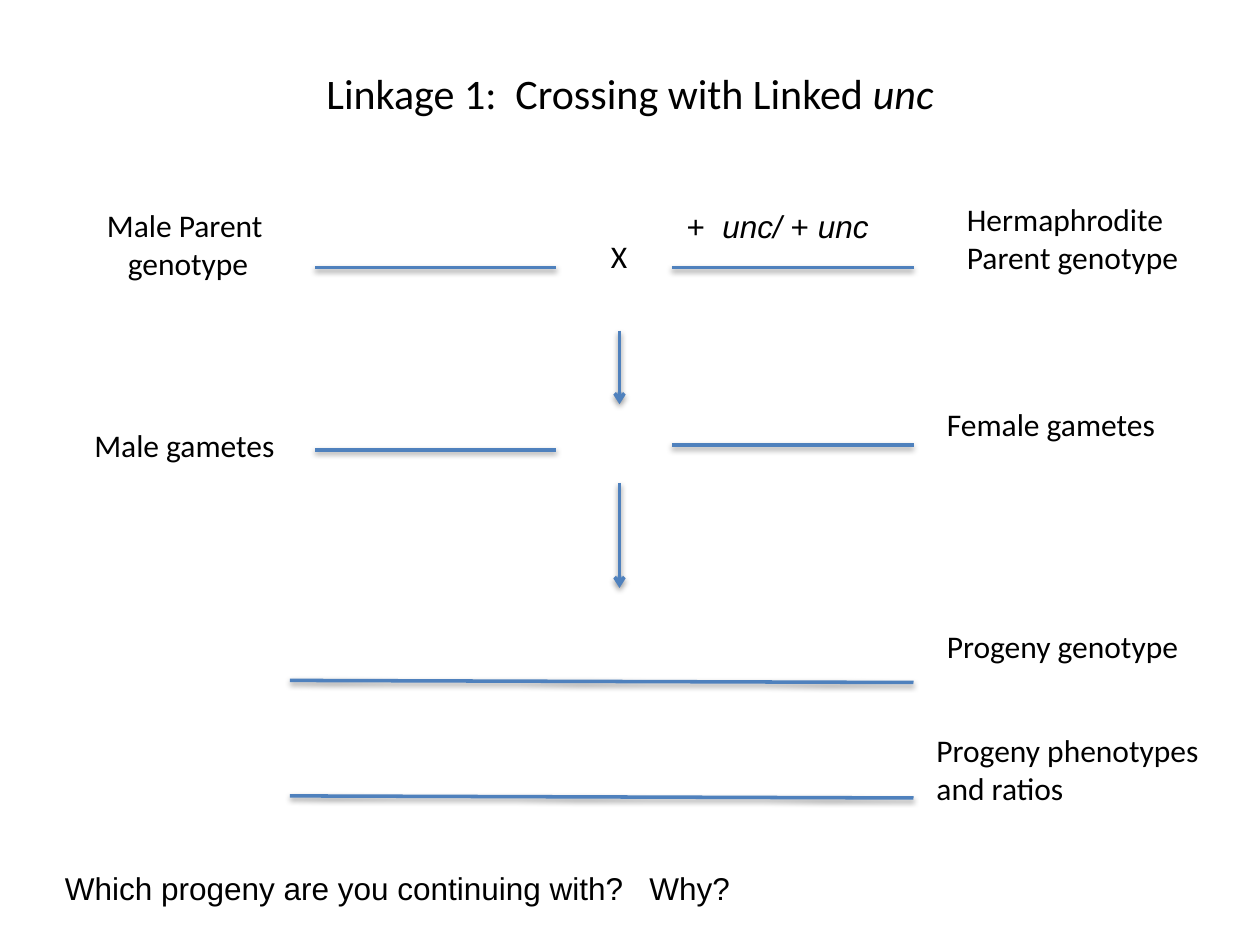
from dataclasses import dataclass

import pptx
import pptx.dml.color
import pptx.enum.shapes
import pptx.enum.text
import pptx.oxml
import pptx.oxml.ns
import pptx.util

COLORS = {"text": "000000", "rule": "4F81BD", "shadow": "000000"}
CELL = pptx.util.Inches(1 / 12)  # the slide is a grid of 120 columns by 90 rows
ONE_LINE, TWO_LINES = 4.8, 8.5  # label heights in rows


@dataclass(frozen=True)
class Span:
    text: str
    italic: bool = False


@dataclass(frozen=True)
class Label:
    col: float
    row: float
    cols: float
    rows: float
    lines: tuple[tuple[Span, ...], ...]
    font: str = "Calibri"
    size: int = 18
    centered: bool = False
    last_indent: float = 0  # columns the last line is set in


@dataclass(frozen=True)
class Rule:
    start: tuple[float, float]
    end: tuple[float, float]
    arrow: bool = False


def plain(*lines: str) -> tuple[tuple[Span, ...], ...]:
    return tuple((Span(line),) for line in lines)


LEFT_BLANK, RIGHT_BLANK, WIDE_BLANK = (30, 53), (64, 87), (27.6, 87)
CENTER = 59

RULES = [
    Rule((cols[0], rows[0]), (cols[1], rows[1]))
    for cols, rows in (
        (LEFT_BLANK, (25.5, 25.5)),
        (RIGHT_BLANK, (25.5, 25.5)),
        (LEFT_BLANK, (42.85, 42.85)),
        (RIGHT_BLANK, (42.4, 42.4)),
        (WIDE_BLANK, (64.8, 65)),
        (WIDE_BLANK, (75.8, 76)),
    )
] + [
    Rule((CENTER, top), (CENTER, bottom), arrow=True)
    for top, bottom in ((31.5, 38.5), (46, 56))
]

LABELS = [
    Label(6, 3.6, 108, 10.4,
          ((Span("Linkage 1:  Crossing with Linked "), Span("unc", True)),),
          size=24, centered=True),
    Label(90.9, 18.5, 22.9, TWO_LINES, plain("Hermaphrodite", "Parent genotype")),
    Label(9, 19, 17.4, TWO_LINES, plain("Male Parent", "genotype"), last_indent=2),
    Label(57, 22, 4, ONE_LINE, plain("X")),
    Label(7.8, 40, 19.8, ONE_LINE, plain("Male gametes")),
    Label(89, 38, 22.4, ONE_LINE, plain("Female gametes")),
    Label(89, 59.1, 24.7, ONE_LINE, plain("Progeny genotype")),
    Label(88, 69, 27.7, TWO_LINES, plain("Progeny phenotypes", "and ratios")),
    Label(5, 82.2, 66.4, ONE_LINE,
          plain("Which progeny are you continuing with?   Why?"), font="Arial"),
    Label(64.2, 19.1, 20.5, ONE_LINE,
          ((Span("+  "), Span("unc/ ", True), Span("+ "), Span("unc", True)),),
          font="Arial"),
]


def grid(*cells: float) -> list[int]:
    return [round(cell * CELL) for cell in cells]


def color(name: str) -> pptx.dml.color.RGBColor:
    return pptx.dml.color.RGBColor.from_string(COLORS[name])


def draw_label(slide, label: Label) -> None:
    box = slide.shapes.add_textbox(*grid(label.col, label.row, label.cols, label.rows))
    frame = box.text_frame
    frame.word_wrap = label.centered
    if label.centered:
        frame.vertical_anchor = pptx.enum.text.MSO_ANCHOR.MIDDLE
    else:
        frame.auto_size = pptx.enum.text.MSO_AUTO_SIZE.SHAPE_TO_FIT_TEXT
    for number, line in enumerate(label.lines):
        paragraph = frame.add_paragraph() if number else frame.paragraphs[0]
        if label.centered:
            paragraph.alignment = pptx.enum.text.PP_ALIGN.CENTER
        for span in line:
            run = paragraph.add_run()
            run.text = span.text
            run.font.name = label.font
            run.font.size = pptx.util.Pt(label.size)
            run.font.italic = span.italic
            run.font.color.rgb = color("text")
    if label.last_indent:
        margin = grid(label.last_indent)[0]
        paragraph._p.get_or_add_pPr().set("marL", str(margin))


def draw_rule(slide, rule: Rule) -> None:
    connector = slide.shapes.add_connector(
        pptx.enum.shapes.MSO_CONNECTOR.STRAIGHT, *grid(*rule.start, *rule.end))
    connector.line.color.rgb = color("rule")
    connector.line.width = pptx.util.Pt(2)
    namespace = pptx.oxml.ns.nsdecls("a")
    if rule.arrow:
        connector.line._get_or_add_ln().append(
            pptx.oxml.parse_xml(f'<a:tailEnd {namespace} type="arrow"/>'))
    connector._element.spPr.append(pptx.oxml.parse_xml(
        f'<a:effectLst {namespace}>'
        '<a:outerShdw blurRad="40000" dist="20000" dir="5400000" rotWithShape="0">'
        f'<a:srgbClr val="{COLORS["shadow"]}"><a:alpha val="38000"/></a:srgbClr>'
        '</a:outerShdw></a:effectLst>'))


def main() -> None:
    presentation = pptx.Presentation()
    presentation.slide_width, presentation.slide_height = grid(120, 90)
    slide = presentation.slides.add_slide(presentation.slide_layouts[6])
    for rule in RULES:
        draw_rule(slide, rule)
    for label in LABELS:
        draw_label(slide, label)
    presentation.save("out.pptx")


if __name__ == "__main__":
    main()
